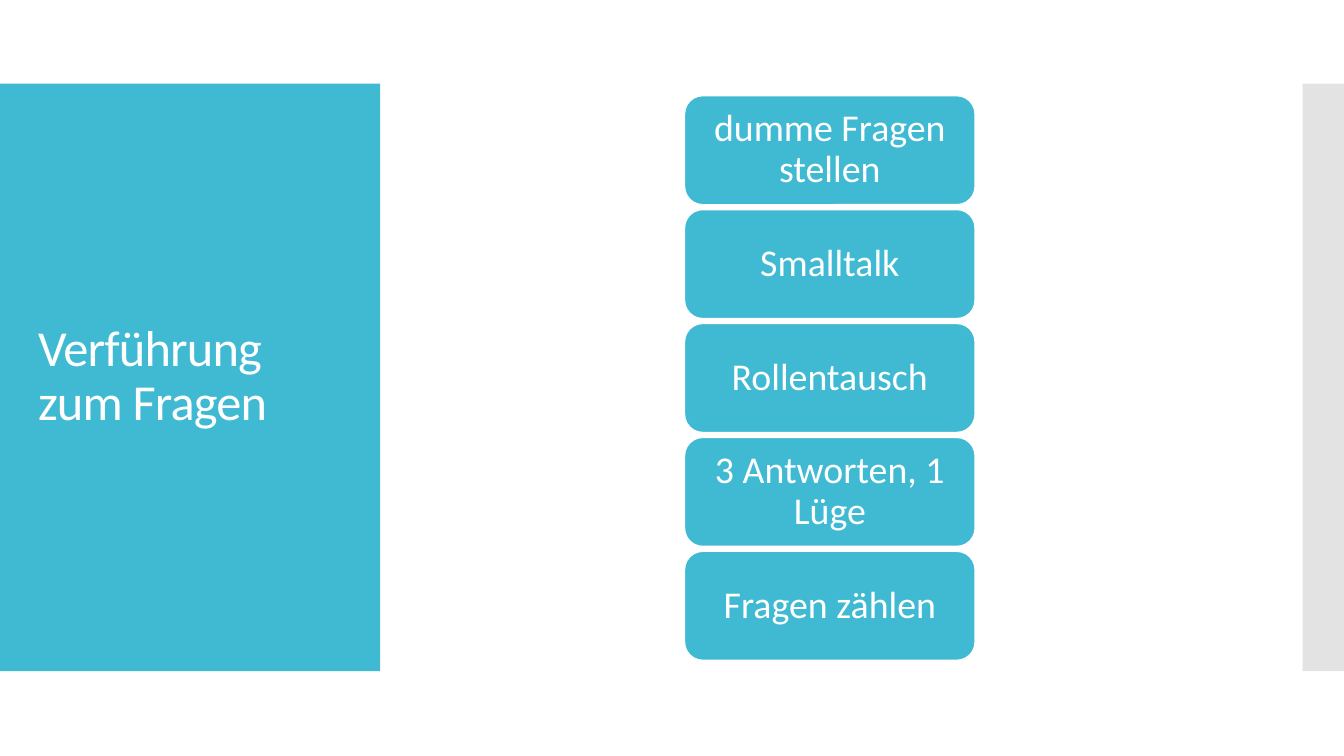
from lxml import etree
from pptx import Presentation
from pptx.dml.color import RGBColor
from pptx.enum.shapes import MSO_SHAPE as Shape
from pptx.enum.text import MSO_ANCHOR as Anchor, PP_ALIGN as Align
from pptx.oxml.ns import qn
from pptx.util import Pt

PX = 9144  # 100 px to the inch
FONT = "Calibri"
TEAL, GREY, WHITE = "40BAD2", "C8C8C8", "FFFFFF"

BAND_TOP, BAND_HEIGHT = 83, 583
CARD_LEFT, CARD_TOP, CARD_WIDTH, CARD_HEIGHT = 679, 95, 288, 108
CARD_PITCH = 113
IDEAS = [
    "dumme Fragen stellen",
    "Smalltalk",
    "Rollentausch",
    "3 Antworten, 1 Lüge",
    "Fragen zählen",
]


def px(*lengths):
    return [length * PX for length in lengths]


def paint(color_holder, color):
    """Set a solid fill from a hex string."""
    color_holder.solid()
    color_holder.fore_color.rgb = RGBColor.from_string(color)


def add_block(slide, preset, box, color):
    block = slide.shapes.add_shape(preset, *px(*box))
    block.shadow.inherit = False
    paint(block.fill, color)
    block.line.fill.background()
    return block


def write(shape, text, size, align, insets):
    """Fill a shape with one wrapped, vertically centred white paragraph."""
    frame = shape.text_frame
    frame.text = text
    frame.word_wrap = True
    frame.vertical_anchor = Anchor.MIDDLE
    side, edge = px(*insets)
    frame.margin_left = frame.margin_right = side
    frame.margin_top = frame.margin_bottom = edge
    paragraph = frame.paragraphs[0]
    paragraph.alignment = align
    paragraph.line_spacing = 0.9
    run = paragraph.runs[0]
    run.font.name = FONT
    run.font.size = Pt(size)
    paint(run.font.fill, WHITE)
    return run


def add_title(slide, text):
    title = slide.shapes.add_textbox(*px(28, 123, 322, 503))
    run = write(title, text, 36, Align.LEFT, (10, 5))
    run.font._element.set("spc", "-60")


def add_side_band(slide):
    """Draw the half-transparent band at the right edge."""
    band = add_block(slide, Shape.RECTANGLE, (1292, BAND_TOP, 42, BAND_HEIGHT), GREY)
    tint = band.fill._xPr.find(qn("a:solidFill"))[0]
    etree.SubElement(tint, qn("a:alpha")).set("val", "50000")


def add_card(slide, top, text):
    box = (CARD_LEFT, top, CARD_WIDTH, CARD_HEIGHT)
    card = add_block(slide, Shape.ROUNDED_RECTANGLE, box, TEAL)
    paint(card.line.fill, WHITE)
    card.line.width = Pt(0.85)
    write(card, text, 27, Align.CENTER, (11, 6))


def main():
    deck = Presentation()
    deck.slide_width, deck.slide_height = px(1333, 750)
    slide = deck.slides.add_slide(deck.slide_layouts[6])
    add_block(slide, Shape.RECTANGLE, (0, BAND_TOP, 377, BAND_HEIGHT), TEAL)
    add_side_band(slide)
    add_title(slide, "Verführung zum Fragen")
    for row, idea in enumerate(IDEAS):
        add_card(slide, CARD_TOP + row * CARD_PITCH, idea)
    deck.save("out.pptx")


if __name__ == "__main__":
    main()
